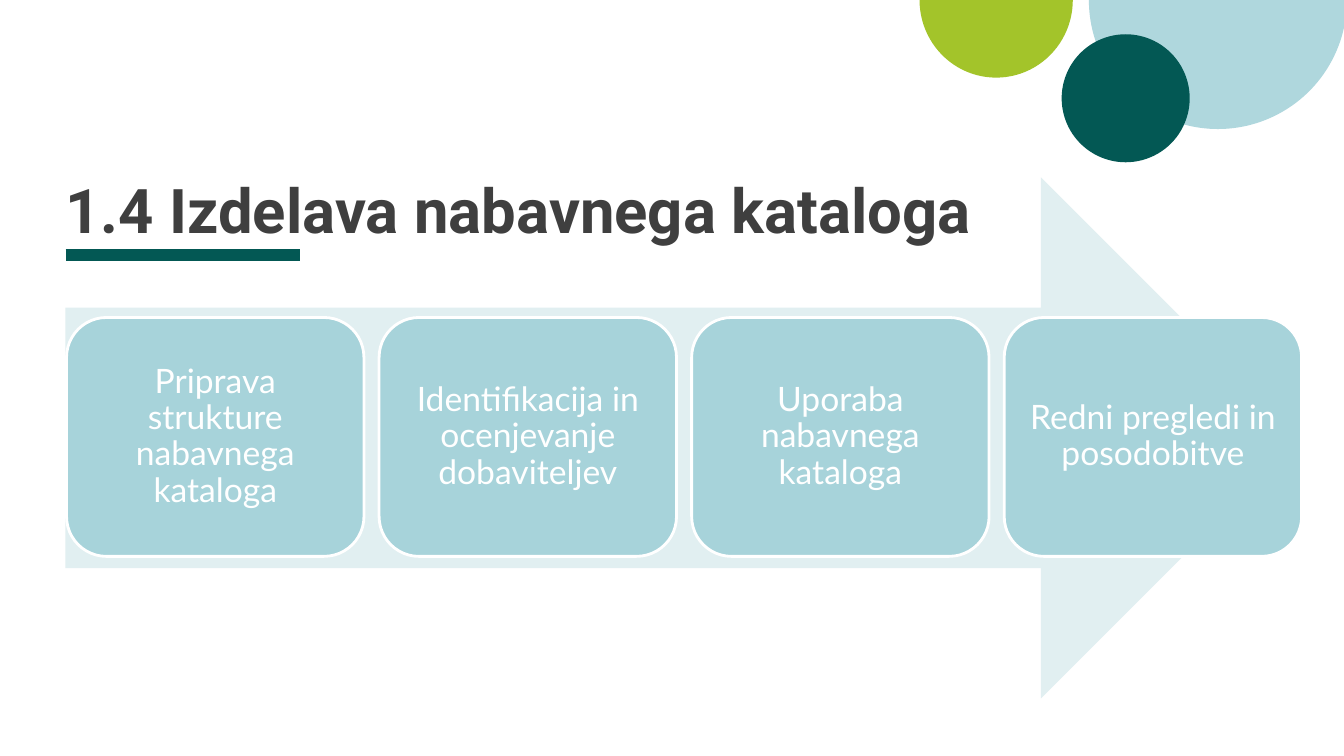
from pptx import Presentation
from pptx.dml.color import RGBColor
from pptx.enum.shapes import MSO_CONNECTOR as Connector, MSO_SHAPE as Shape
from pptx.enum.text import MSO_ANCHOR as Anchor, MSO_AUTO_SIZE as AutoSize, PP_ALIGN as Align
from pptx.oxml.ns import qn
from pptx.util import Inches, Pt
from lxml.etree import SubElement

WHITE = RGBColor(0xFF, 0xFF, 0xFF)
CHARCOAL = RGBColor(0x3F, 0x3F, 0x3F)
PETROL = RGBColor(0x03, 0x58, 0x54)
LIME = RGBColor(0xA3, 0xC4, 0x2A)
SKY = RGBColor(0xAF, 0xD7, 0xDD)
CARD_BLUE = RGBColor(0xA7, 0xD3, 0xDA)
ARROW_BLUE = RGBColor(0xE1, 0xEF, 0xF1)

SLIDE_COLUMNS, SLIDE_ROWS = 133.3, 75
CELL = Inches(0.1)
LEFT_MARGIN = 6.5
HALF_TURN = 108  # 180 degrees in adjustment units

STEPS = [
    "Priprava strukture nabavnega kataloga",
    "Identifikacija in ocenjevanje dobaviteljev",
    "Uporaba nabavnega kataloga",
    "Redni pregledi in posodobitve",
]
CARD_LEFT, CARD_PITCH = 6.6, 31


def cells(*counts):
    """Turn counts of grid columns or rows into lengths."""
    return [round(count * CELL) for count in counts]


def write(frame, text, *, font, size, color, bold=False, align=Align.LEFT,
          anchor=Anchor.MIDDLE, spacing=1.0, inset=0):
    frame.word_wrap = True
    frame.auto_size = AutoSize.NONE
    frame.vertical_anchor = anchor
    frame.margin_left = frame.margin_right = Inches(inset)
    frame.margin_top = frame.margin_bottom = Inches(inset)
    para = frame.paragraphs[0]
    para.alignment = align
    para.line_spacing = spacing
    para.space_before = Pt(0)
    span = para.add_run()
    span.text = text
    span.font.name = font
    span.font.size = Pt(size)
    span.font.bold = bold
    span.font.color.rgb = color


class SlideBuilder:
    heading_font = "Roboto"
    body_font = "Lato"

    def __init__(self, slide):
        self.slide = slide

    def shape(self, kind, box, fill, adjustments=(), line=None):
        shape = self.slide.shapes.add_shape(kind, *cells(*box))
        shape.shadow.inherit = False
        shape.fill.solid()
        shape.fill.fore_color.rgb = fill
        if line is None:
            shape.line.fill.background()
        else:
            shape.line.color.rgb = line
            shape.line.width = Pt(2)
        for index, value in enumerate(adjustments):
            shape.adjustments[index] = value
        return shape

    def rule(self, left, top, width, color, weight):
        rule = self.slide.shapes.add_connector(
            Connector.STRAIGHT, *cells(left, top, left + width, top))
        rule.line.color.rgb = color
        rule.line.width = Pt(weight)
        SubElement(rule._element.spPr, qn("a:effectLst"))

    def title(self, text, box):
        title = self.slide.shapes.title
        title.left, title.top, title.width, title.height = cells(*box)
        write(title.text_frame, text, font=self.heading_font, size=44, color=CHARCOAL,
              bold=True, anchor=Anchor.BOTTOM, spacing=0.8)

    def card(self, text, box):
        card = self.shape(Shape.ROUNDED_RECTANGLE, box, CARD_BLUE, [0.167], WHITE)
        write(card.text_frame, text, font=self.body_font, size=24, color=WHITE,
              align=Align.CENTER, spacing=0.9, inset=0.12)


def main():
    deck = Presentation()
    deck.slide_width, deck.slide_height = cells(SLIDE_COLUMNS, SLIDE_ROWS)
    page = SlideBuilder(deck.slides.add_slide(deck.slide_layouts[5]))

    page.shape(Shape.PIE, (108, -12.8, 25.6, 25.6), SKY, [0, HALF_TURN])
    page.shape(Shape.PIE, (91.2, -7.7, 15.2, 15.4), LIME, [0, HALF_TURN])
    page.shape(Shape.OVAL, (105.3, 3.4, 12.7, 12.7), PETROL)
    page.rule(LEFT_MARGIN, 25.3, 23.3, PETROL, 8)
    page.shape(Shape.RIGHT_ARROW, (LEFT_MARGIN, 17.6, 122.6, 51.7), ARROW_BLUE, [0.5, 0.5])
    page.title("1.4 Izdelava nabavnega kataloga", (LEFT_MARGIN, 18.4, 120.9, 5.9))
    for index, step in enumerate(STEPS):
        page.card(step, (CARD_LEFT + index * CARD_PITCH, 31.5, 29.5, 23.7))

    deck.save("out.pptx")


if __name__ == "__main__":
    main()
